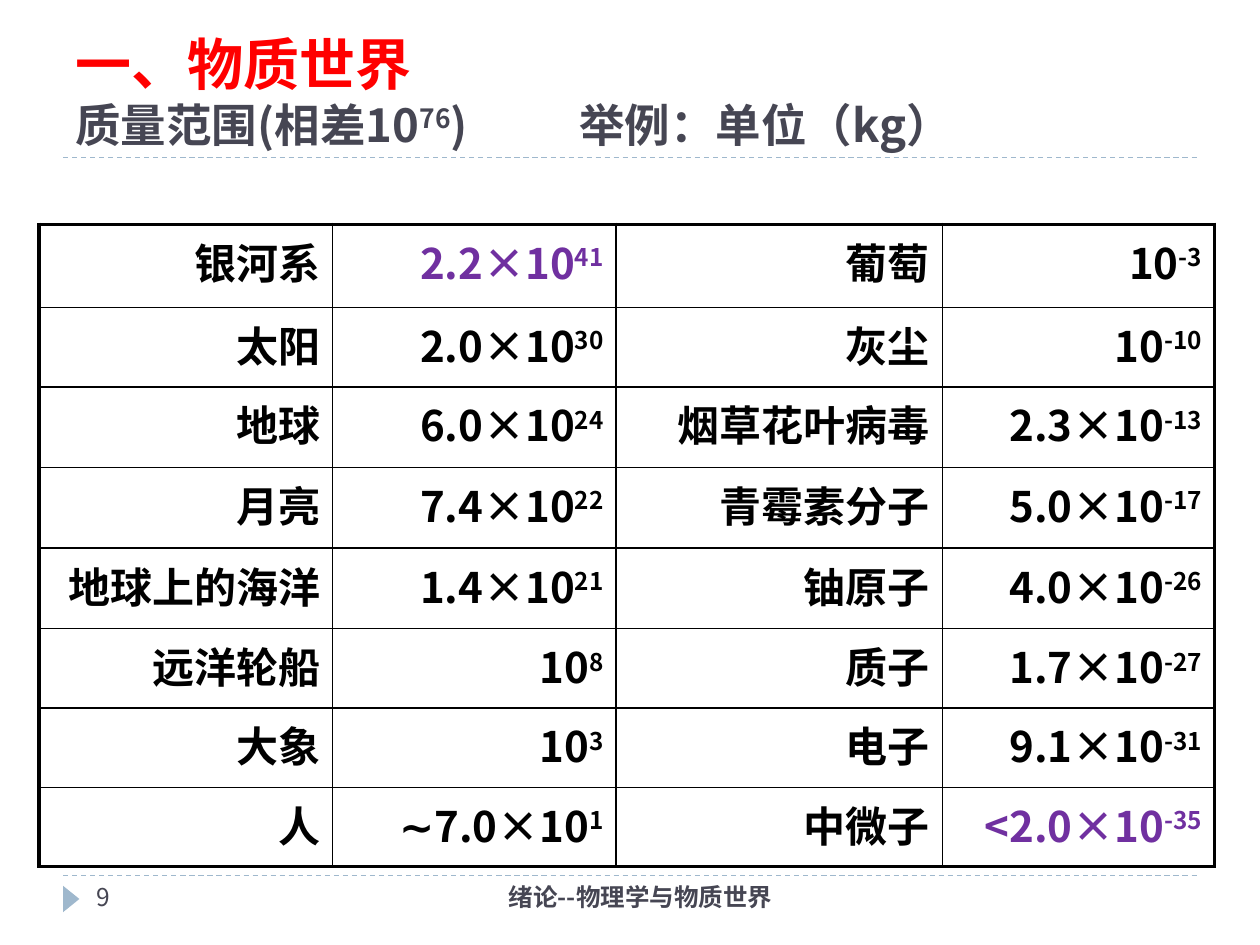
import pptx
import pptx.dml.color
import pptx.enum.dml
import pptx.enum.shapes
import pptx.enum.text
import pptx.oxml.ns
import pptx.util
from lxml import etree

Inches = pptx.util.Inches
Pt = pptx.util.Pt
qn = pptx.oxml.ns.qn
ALIGN = pptx.enum.text.PP_ALIGN

COLORS = {
    "accent": "9FB8CD",
    "text": "464653",
    "title": "FF0000",
    "highlight": "7030A0",
    "black": "000000",
}
FONT = "Noto Sans CJK JP"

MASSES = [
    ("银河系", "2.2×10^41", "葡萄", "10^-3"),
    ("太阳", "2.0×10^30", "灰尘", "10^-10"),
    ("地球", "6.0×10^24", "烟草花叶病毒", "2.3×10^-13"),
    ("月亮", "7.4×10^22", "青霉素分子", "5.0×10^-17"),
    ("地球上的海洋", "1.4×10^21", "铀原子", "4.0×10^-26"),
    ("远洋轮船", "10^8", "质子", "1.7×10^-27"),
    ("大象", "10^3", "电子", "9.1×10^-31"),
    ("人", "∼7.0×10^1", "中微子", "<2.0×10^-35"),
]
EXTREMES = {"2.2×10^41", "<2.0×10^-35"}
COL_WIDTHS = [2.33, 2.25, 2.59, 2.16]
ROW_HEIGHTS = [0.66, 0.63, 0.64, 0.64, 0.64, 0.63, 0.63, 0.63]


def rgb(name):
    return pptx.dml.color.RGBColor.from_string(COLORS[name])


def add_text(p, text, size=14, color="text", bold=False):
    """Add text to a paragraph, raising whatever follows a caret."""
    for i, part in enumerate(text.split("^")):
        r = p.add_run()
        r.text = part
        r.font.size = Pt(size)
        r.font.bold = bold
        r.font.name = FONT
        r.font.color.rgb = rgb(color)
        rPr = r.font._element
        etree.SubElement(rPr, qn("a:ea"), typeface=FONT)
        if i:
            rPr.set("baseline", "30000")


class SlideBuilder:
    """Hold the style and the current slide."""

    def __init__(self, prs):
        self.s = prs.slides.add_slide(prs.slide_layouts[6])

    def rule(self, y):
        line = self.s.shapes.add_connector(
            pptx.enum.shapes.MSO_CONNECTOR.STRAIGHT,
            Inches(0.5), Inches(y), Inches(9.5), Inches(y))
        line.line.color.rgb = rgb("accent")
        line.line.width = Pt(0.75)
        line.line.dash_style = pptx.enum.dml.MSO_LINE.DASH
        etree.SubElement(line._element.spPr, qn("a:effectLst"))

    def marker(self, x, y, w, h):
        sp = self.s.shapes.add_shape(
            pptx.enum.shapes.MSO_SHAPE.ISOSCELES_TRIANGLE,
            Inches(x), Inches(y), Inches(w), Inches(h))
        sp.rotation = 90
        sp.shadow.inherit = False
        sp.fill.solid()
        sp.fill.fore_color.rgb = rgb("accent")
        sp.line.fill.background()

    def text_box(self, x, y, w, h, anchor="TOP", align=ALIGN.LEFT):
        sp = self.s.shapes.add_textbox(Inches(x), Inches(y), Inches(w), Inches(h))
        tf = sp.text_frame
        tf.word_wrap = True
        tf.vertical_anchor = pptx.enum.text.MSO_ANCHOR[anchor]
        p = tf.paragraphs[0]
        p.alignment = align
        return p

    def borders(self, cell, widths):
        tcPr = cell._tc.get_or_add_tcPr()
        for side, width in widths.items():
            ln = etree.SubElement(tcPr, qn("a:ln" + side), w=str(Pt(width)))
            fill = etree.SubElement(ln, qn("a:solidFill"))
            etree.SubElement(fill, qn("a:srgbClr"), val=COLORS["black"])

    def table(self, x, y, rows, col_widths, row_heights):
        table = self.s.shapes.add_table(
            len(rows), len(col_widths), Inches(x), Inches(y),
            Inches(sum(col_widths)), Inches(sum(row_heights))).table
        table.first_row = table.horz_banding = False
        for col, width in zip(table.columns, col_widths):
            col.width = Inches(width)
        for row, height in zip(table.rows, row_heights):
            row.height = Inches(height)
        last_row, last_col = len(rows) - 1, len(col_widths) - 1
        for i, values in enumerate(rows):
            for j, value in enumerate(values):
                cell = table.cell(i, j)
                outer = {"L": j == 0, "R": j == last_col,
                         "T": i == 0, "B": i == last_row}
                self.borders(cell, {k: 2.25 if v else 1 for k, v in outer.items()})
                cell.fill.background()
                p = cell.text_frame.paragraphs[0]
                p.alignment = ALIGN.RIGHT
                before = etree.SubElement(p._p.get_or_add_pPr(), qn("a:spcBef"))
                etree.SubElement(before, qn("a:spcPct"), val="20000")
                color = "highlight" if value in EXTREMES else "black"
                add_text(p, value, size=24, color=color, bold=True)


def main():
    prs = pptx.Presentation()
    prs.slide_width, prs.slide_height = Inches(10), Inches(7.5)
    page = SlideBuilder(prs)
    page.rule(6.95)
    page.rule(1.25)
    page.marker(0.46, 7.07, 0.21, 0.13)

    p = page.text_box(0.5, 0.17, 9, 1.08, anchor="BOTTOM")
    add_text(p, "一、物质世界", size=32, color="title", bold=True)
    p.add_line_break()
    add_text(p, "质量范围(相差10^76", size=26, bold=True)
    add_text(p, ")\t\t举例：单位（kg）", size=26, bold=True)

    page.table(0.31, 1.78, MASSES, COL_WIDTHS, ROW_HEIGHTS)

    add_text(page.text_box(0.67, 6.95, 2.17, 0.4), "9")
    footer = page.text_box(3.17, 6.95, 3.83, 0.4, align=ALIGN.CENTER)
    add_text(footer, "绪论--物理学与物质世界", bold=True)
    prs.save("out.pptx")


if __name__ == "__main__":
    main()
